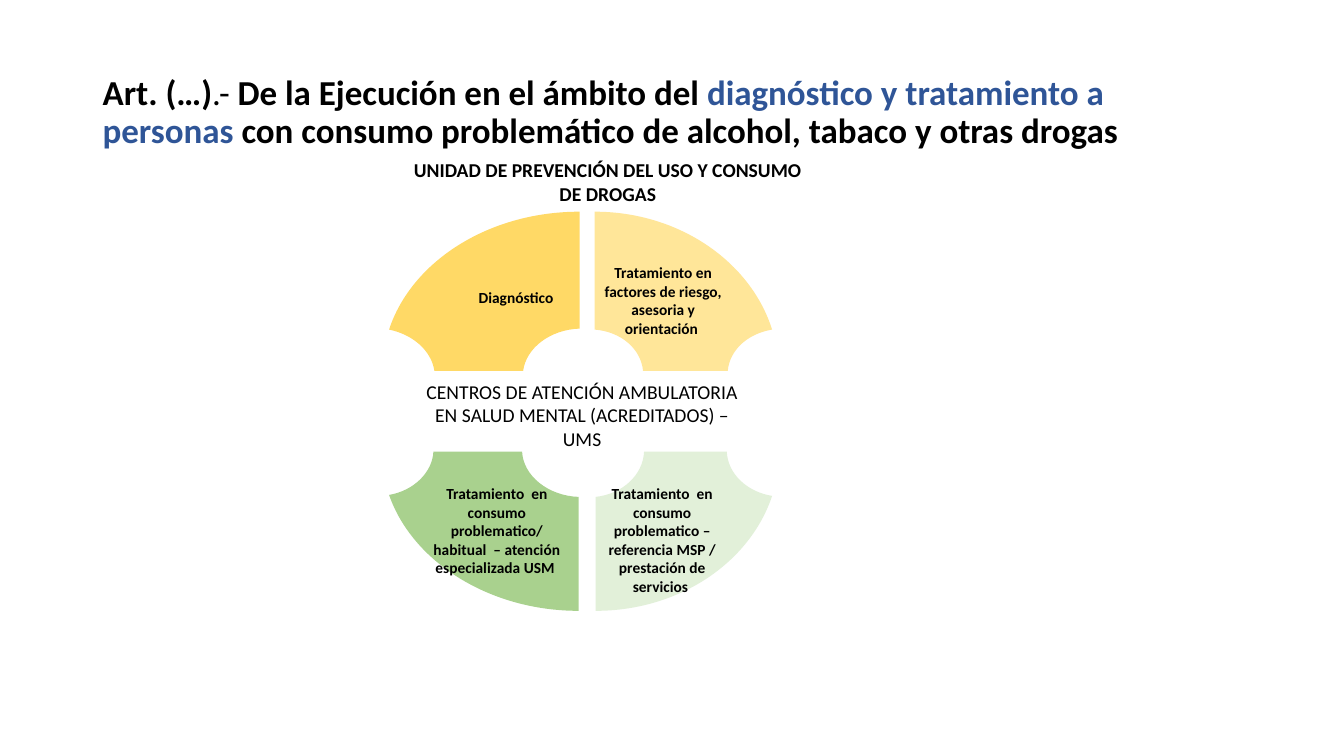
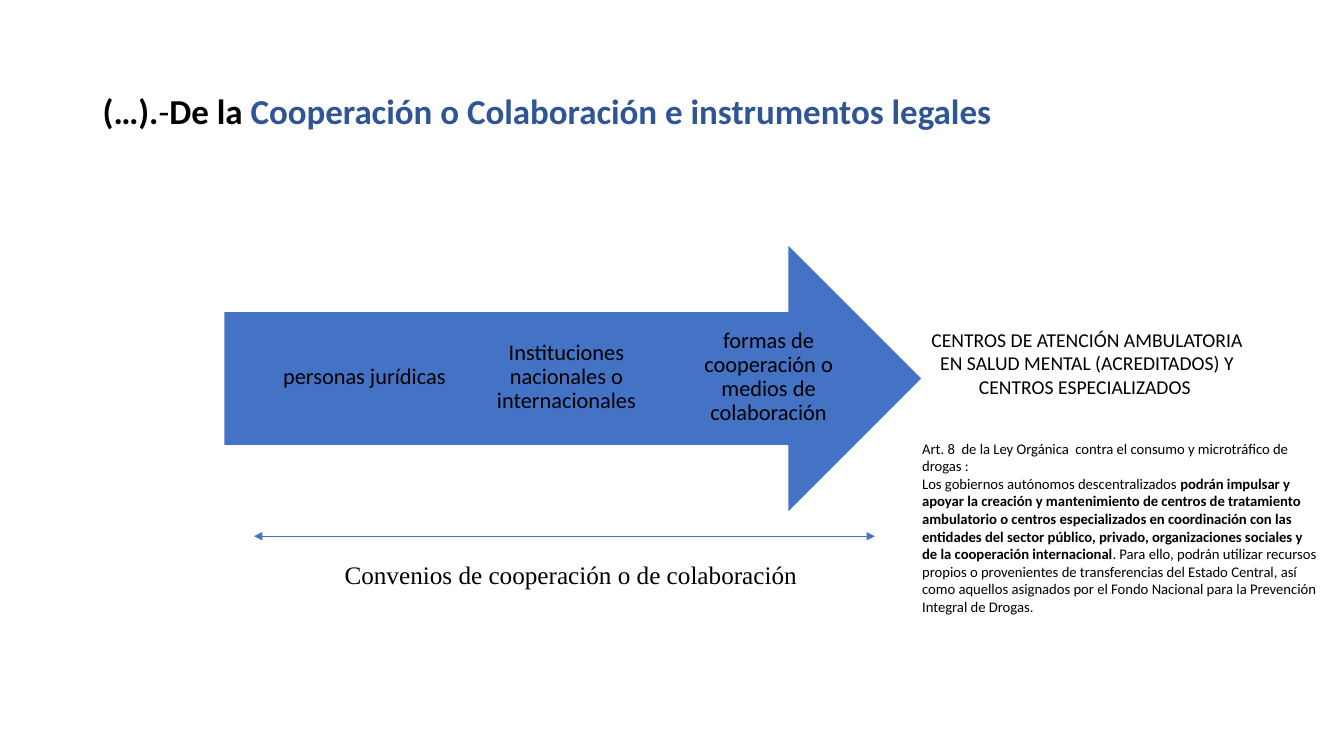
from dataclasses import dataclass

from lxml import etree
from pptx import Presentation
from pptx.dml.color import RGBColor
from pptx.enum.shapes import MSO_CONNECTOR, MSO_SHAPE
from pptx.enum.text import MSO_ANCHOR, MSO_AUTO_SIZE, PP_ALIGN
from pptx.oxml.ns import qn
from pptx.util import Inches, Pt

ARROW = MSO_SHAPE.RIGHT_ARROW
STRAIGHT = MSO_CONNECTOR.STRAIGHT
TOP, MIDDLE = MSO_ANCHOR.TOP, MSO_ANCHOR.MIDDLE
GROW, FIXED = MSO_AUTO_SIZE.SHAPE_TO_FIT_TEXT, MSO_AUTO_SIZE.NONE
LEFT, CENTER = PP_ALIGN.LEFT, PP_ALIGN.CENTER


@dataclass(frozen=True)
class Theme:
    font: str = "Calibri"
    serif: str = "Times New Roman"
    black: str = "000000"
    white: str = "FFFFFF"
    accent: str = "2F5597"
    blue: str = "4472C4"
    gold: str = "FFD966"
    cream: str = "FFE699"
    green: str = "A9D18E"
    mint: str = "E2F0D9"
    title: float = 25
    large: float = 18
    step: float = 16
    head: float = 14
    label: float = 11
    note: float = 10.5


T = Theme()


def rgb(code):
    return RGBColor.from_string(code)


class Deck:
    def __init__(self):
        self.prs = Presentation()
        self.prs.slide_width = Inches(40 / 3)
        self.prs.slide_height = Inches(7.5)
        self.slide = None

    def page(self, *runs):
        """New slide with its title; runs are (text, bold, colour)."""
        self.slide = self.prs.slides.add_slide(self.prs.slide_layouts[6])
        self.text((0.92, 0.4, 11.5, 1.45), [runs], T.title,
                  anchor=MIDDLE, space=0.9, fit=FIXED)

    def text(self, at, paras, size, font=T.font, align=LEFT, anchor=TOP,
             pad=(0.1, 0.05), space=None, wrap=True, fit=GROW):
        box = self.slide.shapes.add_textbox(*map(Inches, at))
        frame = box.text_frame
        frame.word_wrap = wrap
        frame.auto_size = fit
        frame.vertical_anchor = anchor
        frame.margin_left = frame.margin_right = Inches(pad[0])
        frame.margin_top = frame.margin_bottom = Inches(pad[1])
        for i, runs in enumerate(paras):
            para = frame.add_paragraph() if i else frame.paragraphs[0]
            para.alignment = align
            if space:
                para.line_spacing = space
            for words, bold, color in runs:
                run = para.add_run()
                run.text = words
                run.font.name = font
                run.font.size = Pt(size)
                run.font.bold = bold
                run.font.color.rgb = rgb(color)

    def label(self, at, words, size, bold=False, pad=0.05, space=None,
              fit=GROW):
        """Centred text with no side margins."""
        self.text(at, [[(words, bold, T.black)]], size, align=CENTER,
                  anchor=MIDDLE, pad=(0, pad), space=space, fit=fit)

    def petal(self, color, start, *parts):
        """Outline of lines (2 numbers) and cubic curves (6 numbers)."""
        spots = [(Inches(x), Inches(y)) for part in parts
                 for x, y in zip(part[::2], part[1::2])]
        form = self.slide.shapes.build_freeform(*map(Inches, start), scale=1.0)
        form.add_line_segments(spots, close=True)
        shape = form.convert_to_shape()
        # Join each three points of a curve into one segment
        lines = iter(list(shape._element.iter(qn("a:lnTo"))))
        for part in parts:
            first = next(lines)
            if len(part) == 6:
                first.tag = qn("a:cubicBezTo")
                for extra in (next(lines), next(lines)):
                    first.append(extra[0])
                    extra.getparent().remove(extra)
        self.paint(shape, color)

    def paint(self, shape, color, edge=None):
        shape.shadow.inherit = False
        shape.fill.solid()
        shape.fill.fore_color.rgb = rgb(color)
        if edge:
            shape.line.color.rgb = rgb(edge)
            shape.line.width = Pt(1)
        else:
            shape.line.fill.background()

    def arrow(self, at, color, edge):
        shape = self.slide.shapes.add_shape(ARROW, *map(Inches, at))
        self.paint(shape, color, edge)

    def span(self, x1, x2, y, color):
        """Thin level line with an arrowhead at both ends."""
        line = self.slide.shapes.add_connector(
            STRAIGHT, Inches(x1), Inches(y), Inches(x2), Inches(y))
        line.line.color.rgb = rgb(color)
        line.line.width = Pt(0.5)
        props = line._element.spPr.find(qn("a:ln"))
        for end in ("a:headEnd", "a:tailEnd"):
            etree.SubElement(props, qn(end), type="triangle")
        etree.SubElement(line._element.spPr, qn("a:effectLst"))


def care(deck):
    deck.page(
        ("Art. (…)", True, T.black),
        (".- ", False, T.black),
        ("De la Ejecución en el ámbito del ", True, T.black),
        ("diagnóstico y tratamiento a personas ", True, T.accent),
        ("con consumo problemático de alcohol, tabaco y otras drogas",
         True, T.black),
    )

    # Four petals of the ring
    deck.petal(T.gold, (4.31, 3.68), (5.19, 3.68),
               (5.22, 3.45, 5.46, 3.27, 5.75, 3.26), (5.75, 2.1),
               (4.84, 2.1, 4.08, 2.6, 3.86, 3.27),
               (4.1, 3.32, 4.28, 3.48, 4.31, 3.68))
    deck.petal(T.cream, (6.38, 3.68), (7.22, 3.68),
               (7.24, 3.47, 7.42, 3.31, 7.66, 3.27),
               (7.45, 2.6, 6.74, 2.1, 5.9, 2.1), (5.9, 3.27),
               (6.16, 3.29, 6.36, 3.46, 6.38, 3.68))
    deck.petal(T.green, (5.18, 4.48), (4.3, 4.48),
               (4.29, 4.69, 4.1, 4.87, 3.86, 4.91),
               (4.09, 5.57, 4.85, 6.06, 5.74, 6.06), (5.74, 4.93),
               (5.44, 4.92, 5.19, 4.72, 5.18, 4.48))
    deck.petal(T.mint, (7.21, 4.48), (6.39, 4.48),
               (6.38, 4.71, 6.18, 4.9, 5.91, 4.93), (5.91, 6.06),
               (6.74, 6.06, 7.44, 5.58, 7.66, 4.92),
               (7.41, 4.88, 7.22, 4.7, 7.21, 4.48))

    # Petal labels
    for at, words in (
        ((5.9, 2.56, 1.36, 0.84),
         "Tratamiento en factores de riesgo, asesoria y orientación "),
        ((4.39, 2.8, 1.46, 0.29), "Diagnóstico"),
        ((4.25, 4.75, 1.36, 1.03),
         "Tratamiento  en consumo problematico/ habitual  – atención "
         "especializada USM "),
        ((5.89, 4.75, 1.36, 1.21),
         "Tratamiento  en consumo problematico – referencia MSP / "
         "prestación de servicios "),
    ):
        deck.label(at, words, T.label, bold=True)

    # Headings above and inside the ring
    deck.label((3.99, 1.51, 4.08, 0.58),
               "UNIDAD DE PREVENCIÓN DEL USO Y CONSUMO DE DROGAS",
               T.head, bold=True)
    deck.label((4.12, 3.71, 3.31, 0.81),
               "CENTROS DE ATENCIÓN AMBULATORIA EN SALUD MENTAL "
               "(ACREDITADOS) – UMS", T.head)


def pacts(deck):
    deck.page(
        ("(…).", True, T.black),
        ("-", False, T.black),
        ("De la ", True, T.black),
        ("Cooperación o Colaboración e instrumentos legales",
         True, T.accent),
    )

    # Arrow with three evenly spaced steps
    deck.arrow((2.22, 2.42, 6.93, 2.67), T.blue, T.white)
    steps = ("personas jurídicas",
             "Instituciones nacionales o internacionales",
             "formas de cooperación o medios de colaboración")
    for i, words in enumerate(steps):
        deck.label((2.78 + 4.01 * i / 2, 3.08, 1.67, 1.33), words, T.step,
                   pad=0.18, space=0.9, fit=FIXED)

    # Result of the arrow
    deck.label((9.13, 3.19, 3.31, 0.82),
               "CENTROS DE ATENCIÓN AMBULATORIA EN SALUD MENTAL "
               "(ACREDITADOS) Y CENTROS ESPECIALIZADOS ", T.head)

    # Span and its caption
    deck.span(2.52, 8.68, 5.32, T.blue)
    deck.text((3.32, 5.5, 4.74, 0.4),
              [[("Convenios de cooperación o de colaboración",
                 False, T.black)]], T.large, font=T.serif, wrap=False)

    # Legal note
    deck.text((9.05, 4.31, 4.12, 1.87), [
        [("Art. 8  de la Ley Orgánica  contra el consumo y microtráfico "
          "de drogas :", False, T.black)],
        [("Los gobiernos autónomos descentralizados ", False, T.black),
         ("podrán impulsar y apoyar la creación y mantenimiento de centros "
          "de tratamiento ambulatorio o centros especializados en "
          "coordinación con las entidades del sector público, privado, "
          "organizaciones sociales y de la cooperación internacional",
          True, T.black),
         (". Para ello, podrán utilizar recursos propios o provenientes de "
          "transferencias del Estado Central, así como aquellos asignados "
          "por el Fondo Nacional para la Prevención Integral de Drogas.",
          False, T.black)],
    ], T.note)


def main():
    deck = Deck()
    care(deck)
    pacts(deck)
    deck.prs.save("out.pptx")


if __name__ == "__main__":
    main()
